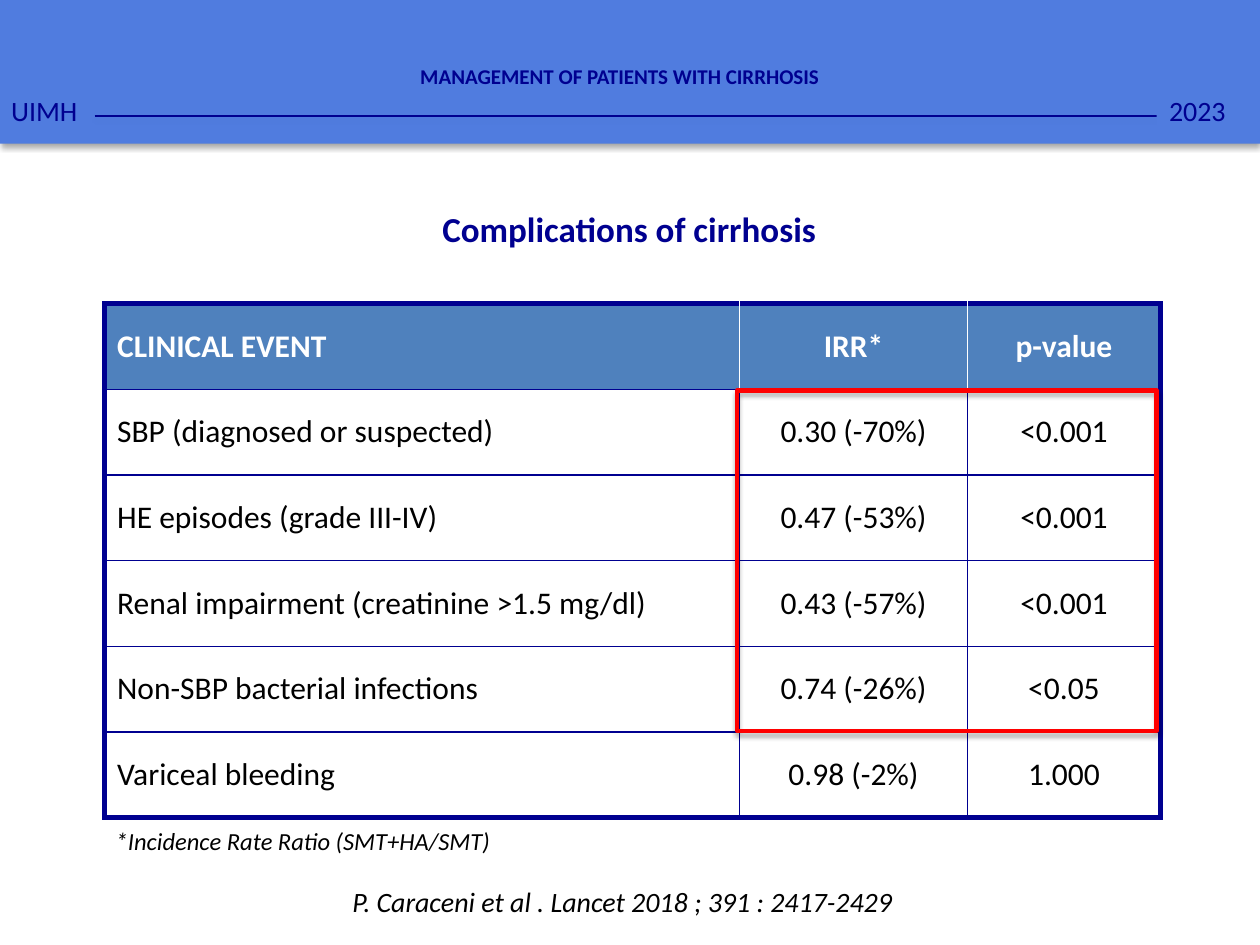
from lxml import etree
from pptx import Presentation
from pptx.dml.color import RGBColor
from pptx.enum.shapes import MSO_CONNECTOR, MSO_SHAPE
from pptx.enum.text import MSO_ANCHOR, PP_ALIGN
from pptx.oxml import parse_xml
from pptx.util import Inches, Pt

LEFT, MID = PP_ALIGN.LEFT, PP_ALIGN.CENTER
TOP, CENTRE, BOTTOM = MSO_ANCHOR.TOP, MSO_ANCHOR.MIDDLE, MSO_ANCHOR.BOTTOM
RECT, LINE = MSO_SHAPE.RECTANGLE, MSO_CONNECTOR.STRAIGHT
NS = "http://schemas.openxmlformats.org/drawingml/2006/main"
HUES = {"navy": "000090", "band": "507CDF", "head": "4F81BD",
        "white": "FFFFFF", "black": "000000", "red": "FF0000"}

ROWS = [
    ("CLINICAL EVENT", "IRR*", "p-value"),
    ("SBP (diagnosed or suspected)", "0.30 (-70%)", "<0.001"),
    ("HE episodes (grade III-IV)", "0.47 (-53%)", "<0.001"),
    ("Renal impairment (creatinine >1.5 mg/dl)", "0.43 (-57%)", "<0.001"),
    ("Non-SBP bacterial infections", "0.74 (-26%)", "<0.05"),
    ("Variceal bleeding", "0.98 (-2%)", "1.000"),
]
COLS = (5.04, 1.81, 1.53)
ROW_H = 0.68
GRID = (0.83, 2.41, sum(COLS), ROW_H * len(ROWS))

# text, place, size, colour, bold, italic, alignment, wrap
NOTES = [
    ("Complications of cirrhosis", (0.98, 1.6, 8.03, 0.44), 20, "navy", True, False, MID, True),
    ("*Incidence Rate Ratio (SMT+HA/SMT)", (0.82, 6.51, 3.25, 0.34),
     14, "black", False, True, LEFT, False),
    ("P. Caraceni et al . Lancet 2018 ; 391 : 2417-2429", (2.65, 6.97, 4.58, 0.37),
     16, "black", False, True, MID, False),
]
# text, place, size, bold, alignment, anchor
LABELS = [
    ("2023", (9.18, 0.69, 0.82, 0.37), 16, False, LEFT, TOP),
    ("MANAGEMENT OF PATIENTS WITH CIRRHOSIS", (0.67, 0, 8.5, 0.75), 12, True, MID, BOTTOM),
    ("UIMH", (-0.01, 0.69, 0.73, 0.37), 16, False, LEFT, TOP),
]


def rgb(hue):
    return RGBColor.from_string(HUES[hue])


def inch(place):
    return [Inches(n) for n in place]


def write(frame, text, size, hue, bold=False, italic=False, align=LEFT):
    para = frame.paragraphs[0]
    para.text = text
    para.alignment = align
    font = para.font
    font.name, font.size = "Calibri", Pt(size)
    font.bold, font.italic = bold, italic
    font.color.rgb = rgb(hue)
    return para


def shade(shape, alpha, dist):
    """Give the shape a soft black shadow straight below it."""
    for old in shape._element.spPr.findall(f"{{{NS}}}effectLst"):
        shape._element.spPr.remove(old)
    shape._element.spPr.append(parse_xml(
        f'<a:effectLst xmlns:a="{NS}"><a:outerShdw blurRad="{Pt(3.1)}" dist="{Pt(dist)}" '
        f'dir="5400000" rotWithShape="0"><a:srgbClr val="{HUES["black"]}">'
        f'<a:alpha val="{alpha * 1000}"/></a:srgbClr></a:outerShdw></a:effectLst>'))


def block(shapes, place, fill=None):
    shape = shapes.add_shape(RECT, *inch(place))
    shape.shadow.inherit = False
    shape.line.fill.background()
    if fill:
        shape.fill.solid()
        shape.fill.fore_color.rgb = rgb(fill)
    else:
        shape.fill.background()
    return shape


def edge(cell, side, hue, width):
    props = cell._tc.get_or_add_tcPr()
    line = etree.SubElement(props, f"{{{NS}}}ln{side}", w=str(Pt(width)))
    solid = etree.SubElement(line, f"{{{NS}}}solidFill")
    etree.SubElement(solid, f"{{{NS}}}srgbClr", val=HUES[hue])


def add_grid(shapes):
    table = shapes.add_table(len(ROWS), len(COLS), *inch(GRID)).table
    table.horz_banding = False
    for col, width in zip(table.columns, COLS):
        col.width = Inches(width)
    for r, row in enumerate(ROWS):
        table.rows[r].height = Inches(ROW_H)
        head = r == 0
        for c, text in enumerate(row):
            cell = table.cell(r, c)
            cell.vertical_anchor = CENTRE
            write(cell.text_frame, text, 18, "white" if head else "black",
                  bold=head, align=MID if c else LEFT)
            outer = {"L": c == 0, "R": c == len(COLS) - 1,
                     "T": head, "B": r == len(ROWS) - 1}
            for side, thick in outer.items():
                inner = "white" if head and side in "LR" else "navy"
                edge(cell, side, "navy" if thick else inner, 3 if thick else 0.75)
            cell.fill.solid()
            cell.fill.fore_color.rgb = rgb("head" if head else "white")


def add_banner(shapes):
    group = shapes.add_group_shape().shapes
    shade(block(group, (0, -0.02, 10, 1.16), "band"), 35, 1.8)
    rule = group.add_connector(LINE, *inch((0.75, 0.92, 9.18, 0.92)))
    rule.line.color.rgb = rgb("navy")
    rule.line.width = Pt(0.75)
    shade(rule, 38, 1.6)
    for text, place, size, bold, align, anchor in LABELS:
        frame = block(group, place, "band").text_frame
        frame.word_wrap = True
        frame.vertical_anchor = anchor
        write(frame, text, size, "navy", bold, align=align)


def main():
    deck = Presentation()
    deck.slide_width, deck.slide_height = inch((10, 7.5))
    shapes = deck.slides.add_slide(deck.slide_layouts[6]).shapes
    add_grid(shapes)
    box = block(shapes, (5.85, 3.1, 3.33, 2.7))
    box.line.color.rgb = rgb("red")
    box.line.width = Pt(2.5)
    shade(box, 35, 1.8)
    for text, place, size, hue, bold, italic, align, wrap in NOTES:
        frame = shapes.add_textbox(*inch(place)).text_frame
        frame.word_wrap = wrap
        write(frame, text, size, hue, bold, italic, align)
    add_banner(shapes)
    deck.save("out.pptx")


if __name__ == "__main__":
    main()
